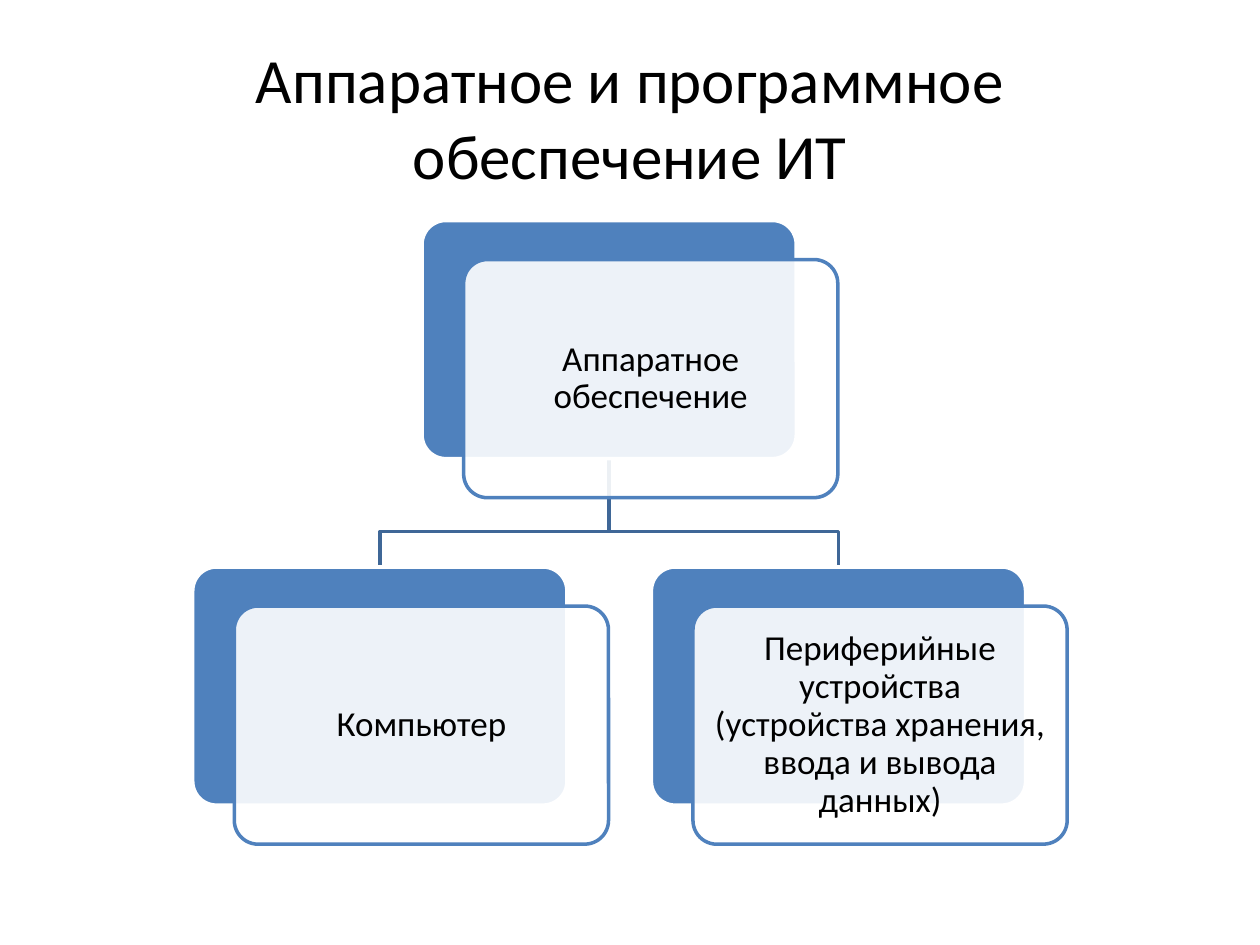
from lxml.etree import SubElement
from pptx import Presentation
from pptx.dml.color import RGBColor
from pptx.enum.shapes import MSO_SHAPE
from pptx.enum.text import MSO_ANCHOR, PP_ALIGN
from pptx.oxml.ns import qn
from pptx.util import Inches, Pt

BLUE = RGBColor(0x4F, 0x81, 0xBD)
DARK_BLUE = RGBColor(0x3F, 0x67, 0x97)
WHITE = RGBColor(0xFF, 0xFF, 0xFF)
BLACK = RGBColor(0, 0, 0)

CARD_WIDTH, CARD_HEIGHT = 2.97, 1.89
OFFSET_X, OFFSET_Y = 0.33, 0.31  # front card relative to the back card
ROOT_LEFT, ROOT_TOP = 3.35, 1.75
CHILD_TOP = 4.5
CHILD_SHIFT = 1.82  # each child lies this far to one side of the root
BRANCH_TOP = 4.22


class HierarchySlide:
    font_name = "Calibri"
    line_width = Pt(2)

    def __init__(self, page):
        self.page = page

    def style_text(self, frame, text, size):
        frame.word_wrap = True
        frame.vertical_anchor = MSO_ANCHOR.MIDDLE
        para = frame.paragraphs[0]
        para.text = text
        para.alignment = PP_ALIGN.CENTER
        para.font.name = self.font_name
        para.font.size = Pt(size)
        para.font.color.rgb = BLACK
        return para

    def title(self, text):
        title = self.page.shapes.title
        title.left, title.top = Inches(0.5), Inches(0.3)
        title.width, title.height = Inches(9), Inches(1.25)
        self.style_text(title.text_frame, text, 36)

    def branch(self, start_x, end_x):
        points = [(start_x, BRANCH_TOP), (end_x, BRANCH_TOP), (end_x, CHILD_TOP)]
        builder = self.page.shapes.build_freeform(
            Inches(start_x), Inches(ROOT_TOP + CARD_HEIGHT))
        builder.add_line_segments(
            [(Inches(x), Inches(y)) for x, y in points], close=False)
        branch = builder.convert_to_shape()
        branch.shadow.inherit = False
        branch.fill.background()
        branch.line.color.rgb = DARK_BLUE
        branch.line.width = self.line_width

    def box(self, left, top, fill, line):
        box = self.page.shapes.add_shape(
            MSO_SHAPE.ROUNDED_RECTANGLE, Inches(left), Inches(top),
            Inches(CARD_WIDTH), Inches(CARD_HEIGHT))
        box.adjustments[0] = 0.1
        box.shadow.inherit = False
        box.fill.solid()
        box.fill.fore_color.rgb = fill
        box.line.color.rgb = line
        box.line.width = self.line_width
        return box

    def card(self, left, top, text):
        self.box(left, top, BLUE, WHITE)
        front = self.box(left + OFFSET_X, top + OFFSET_Y, WHITE, BLUE)
        # Front card is 90% opaque
        color = front.fill._xPr.find(qn("a:solidFill"))[0]
        SubElement(color, qn("a:alpha"), val="90000")
        frame = front.text_frame
        frame.margin_left = frame.margin_right = Inches(0.08)
        frame.margin_top = frame.margin_bottom = Inches(0.08)
        self.style_text(frame, text, 20).line_spacing = 0.9


def main():
    deck = Presentation()
    deck.slide_width, deck.slide_height = Inches(10), Inches(7.5)
    slide = HierarchySlide(deck.slides.add_slide(deck.slide_layouts[5]))
    slide.title("Аппаратное и программное обеспечение ИТ")

    # Branches lie behind the cards
    root_center = ROOT_LEFT + CARD_WIDTH / 2
    for shift in (CHILD_SHIFT, -CHILD_SHIFT):
        slide.branch(root_center, root_center + shift)

    # Root card and its two children
    slide.card(ROOT_LEFT, ROOT_TOP, "Аппаратное обеспечение")
    slide.card(ROOT_LEFT - CHILD_SHIFT, CHILD_TOP, "Компьютер")
    slide.card(ROOT_LEFT + CHILD_SHIFT, CHILD_TOP,
               "Периферийные устройства (устройства хранения, ввода и вывода данных)")

    deck.save("out.pptx")


if __name__ == "__main__":
    main()
